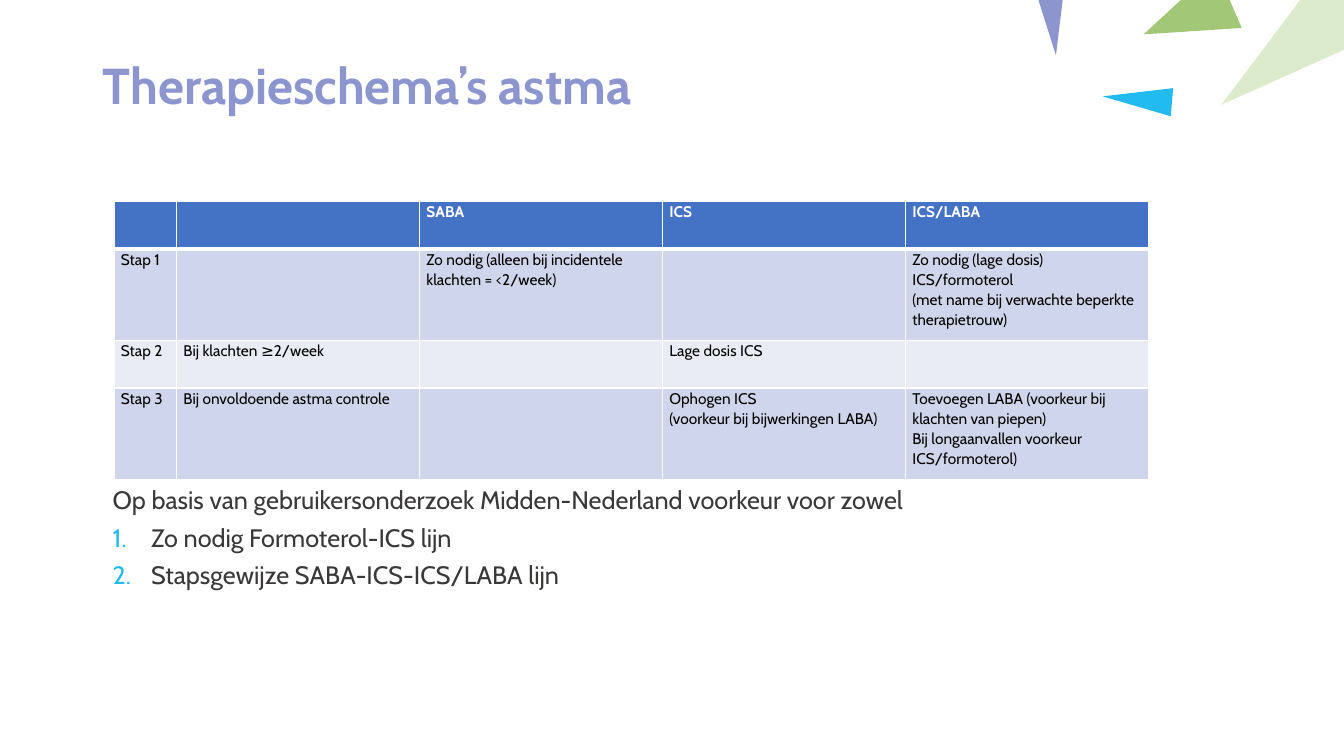
from lxml import etree
from pptx import Presentation
from pptx.dml.color import RGBColor
from pptx.enum.shapes import MSO_SHAPE
from pptx.enum.text import MSO_ANCHOR, PP_ALIGN
from pptx.oxml.ns import qn
from pptx.util import Inches, Pt

FONT = "Cabin"
COLORS = {
    "lilac": "8C95CD", "green": "A2C877", "cyan": "21BBEF", "header": "4472C4",
    "band": "CFD5EA", "light": "E9EBF5", "white": "FFFFFF", "black": "000000",
    "text": "3B3838",
}
TITLE = "Therapieschema’s astma"
TRIANGLES = [
    (11.44, -0.3, 0.65, 0.92, 246.8, "green", 100),
    (12.43, -0.9, 1.23, 2.39, 231.4, "green", 36),
    (11.14, 0.64, 0.28, 0.69, 274.8, "cyan", 100),
    (10.23, -0.37, 0.4, 0.92, 174.7, "lilac", 100),
]
COLUMN_WIDTHS = [0.62] + [2.41] * 4
ROW_HEIGHTS = [0.47, 0.91, 0.47, 0.91]
ROWS = [
    [[], [], ["SABA"], ["ICS"], ["ICS/LABA"]],
    [["Stap 1"], [], ["Zo nodig (alleen bij incidentele klachten = <2/week)"], [],
     ["Zo nodig (lage dosis) ICS/formoterol",
      "(met name bij verwachte beperkte therapietrouw)"]],
    [["Stap 2"], ["Bij klachten ≥2/week"], [], ["Lage dosis ICS"], []],
    [["Stap 3"], ["Bij onvoldoende astma controle"], [],
     ["Ophogen ICS", "(voorkeur bij bijwerkingen LABA)"],
     ["Toevoegen LABA (voorkeur bij klachten van piepen)",
      "Bij longaanvallen voorkeur ICS/formoterol)"]],
]
INTRO = "Op basis van gebruikersonderzoek Midden-Nederland voorkeur voor zowel"
LINES = ["Zo nodig Formoterol-ICS lijn", "Stapsgewijze SABA-ICS-ICS/LABA lijn"]


def rgb(name):
    return RGBColor.from_string(COLORS[name])


def add_span(para, text, size, color, bold=False):
    span = para.add_run()
    span.text = text
    span.font.name = FONT
    span.font.size = Pt(size)
    span.font.bold = bold
    span.font.color.rgb = rgb(color)


def next_para(frame, index):
    return frame.paragraphs[0] if index == 0 else frame.add_paragraph()


def add_title(page):
    title = page.shapes.title
    title.left, title.top = Inches(0.92), Inches(0.15)
    title.width, title.height = Inches(11.5), Inches(1.45)
    title.text_frame.vertical_anchor = MSO_ANCHOR.MIDDLE
    para = title.text_frame.paragraphs[0]
    para.alignment = PP_ALIGN.LEFT
    para.line_spacing = 0.9
    add_span(para, TITLE, 36, "lilac", True)


def add_triangles(page):
    for left, top, width, height, angle, color, opacity in TRIANGLES:
        triangle = page.shapes.add_shape(
            MSO_SHAPE.ISOSCELES_TRIANGLE,
            Inches(left), Inches(top), Inches(width), Inches(height))
        triangle.rotation = angle
        triangle.shadow.inherit = False
        triangle.line.fill.background()
        triangle.fill.solid()
        triangle.fill.fore_color.rgb = rgb(color)
        if opacity < 100:
            tone = triangle.fill._xPr.find(".//" + qn("a:srgbClr"))
            etree.SubElement(tone, qn("a:alpha"), val=str(opacity * 1000))


def add_borders(cell, row):
    properties = cell._tc.get_or_add_tcPr()
    widths = {"L": 1, "R": 1, "T": 3 if row == 1 else 1, "B": 3 if row == 0 else 1}
    for side, points in widths.items():
        line = etree.SubElement(properties, qn(f"a:ln{side}"), w=str(Pt(points)))
        fill = etree.SubElement(line, qn("a:solidFill"))
        etree.SubElement(fill, qn("a:srgbClr"), val=COLORS["white"])


def fill_cell(cell, row, texts):
    cell.margin_left = cell.margin_right = Inches(0.07)
    cell.margin_top = cell.margin_bottom = 0
    add_borders(cell, row)
    cell.fill.solid()
    cell.fill.fore_color.rgb = rgb("header" if row == 0 else "band" if row % 2 else "light")
    for index, text in enumerate(texts):
        para = next_para(cell.text_frame, index)
        para.line_spacing = 1.07
        add_span(para, text, 11, "black" if row else "white", row == 0)


def add_steps(page):
    table = page.shapes.add_table(
        len(ROWS), len(COLUMN_WIDTHS), Inches(1.13), Inches(2),
        Inches(sum(COLUMN_WIDTHS)), Inches(sum(ROW_HEIGHTS))).table
    for column, width in zip(table.columns, COLUMN_WIDTHS):
        column.width = Inches(width)
    for row, height in enumerate(ROW_HEIGHTS):
        table.rows[row].height = Inches(height)
        for column, texts in enumerate(ROWS[row]):
            fill_cell(table.cell(row, column), row, texts)


def add_advice(page):
    box = page.shapes.add_textbox(Inches(0.52), Inches(4.76), Inches(11.6), Inches(2.23))
    frame = box.text_frame
    frame.word_wrap = True
    for index, text in enumerate([INTRO] + LINES):
        para = next_para(frame, index)
        properties = para._p.get_or_add_pPr()
        properties.set("marL", str(Inches(0.88 if index else 0.5)))
        if index:
            properties.set("indent", str(Inches(-0.38)))
            color = etree.SubElement(properties, qn("a:buClr"))
            etree.SubElement(color, qn("a:srgbClr"), val=COLORS["cyan"])
            etree.SubElement(properties, qn("a:buFont"), typeface=FONT)
            etree.SubElement(properties, qn("a:buAutoNum"), type="arabicPeriod")
            para.space_before = Pt(5)
        add_span(para, text, 18, "text")


def main():
    deck = Presentation()
    deck.slide_width, deck.slide_height = Inches(13.33), Inches(7.5)
    page = deck.slides.add_slide(deck.slide_layouts[5])
    add_title(page)
    add_triangles(page)
    add_steps(page)
    add_advice(page)
    deck.save("out.pptx")


if __name__ == "__main__":
    main()
